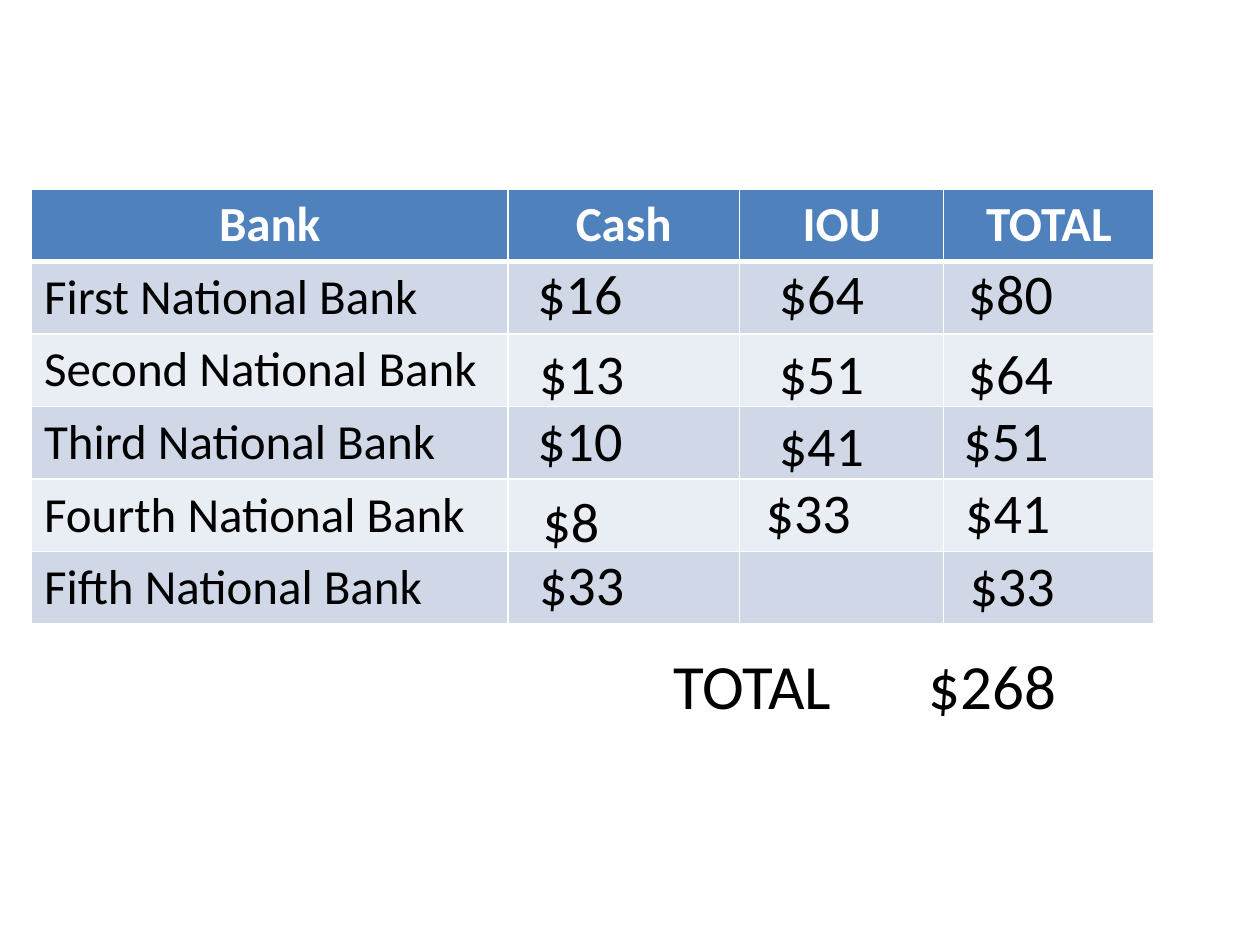
"""Build the slide of cash, IOUs and totals held by five banks."""
from pptx import Presentation
from pptx.dml.color import RGBColor
from pptx.enum.text import MSO_AUTO_SIZE, PP_ALIGN
from pptx.oxml import parse_xml
from pptx.oxml.ns import nsdecls
from pptx.util import Pt

COLORS = {"head": "4F81BD", "odd": "D0D8E8", "even": "E9EDF4",
          "white": "FFFFFF", "black": "000000"}
HEADS = ["Bank", "Cash", "IOU", "TOTAL"]
BANKS = ["First", "Second", "Third", "Fourth", "Fifth"]
WIDTHS = [272.2, 132.5, 116.6, 120.2]
AMOUNTS = [
    ("$16", 300, 144), ("$64", 438, 144), ("$80", 546, 144),
    ("$13", 301, 190), ("$51", 438, 190), ("$64", 546, 190),
    ("$10", 300, 228), ("$41", 438, 231), ("$51", 543.5, 228),
    ("$8", 303, 274.5), ("$33", 430.5, 269.5), ("$41", 544.5, 269.5),
    ("$33", 301, 310.5), ("$33", 547, 311),
]


class Deck:
    """Hold the style and the current slide."""

    def __init__(self, width, height):
        self.font = "Calibri"
        self.prs = Presentation()
        self.prs.slide_width, self.prs.slide_height = Pt(width), Pt(height)
        self.slide = self.prs.slides.add_slide(self.prs.slide_layouts[6])

    def style(self, para, color="black", **form):
        for run in para.runs:
            for key, value in {"name": self.font, "bold": False, **form}.items():
                setattr(run.font, key, value)
            run.font.color.rgb = RGBColor.from_string(COLORS[color])

    def text(self, words, left, top, width, height, size, tab=None):
        box = self.slide.shapes.add_textbox(Pt(left), Pt(top), Pt(width), Pt(height))
        frame = box.text_frame
        frame.word_wrap = True
        frame.auto_size = MSO_AUTO_SIZE.SHAPE_TO_FIT_TEXT
        para = frame.paragraphs[0]
        para.add_run().text = words
        self.style(para, size=Pt(size))
        if tab:
            para._p.get_or_add_pPr().append(parse_xml(
                f'<a:tabLst {nsdecls("a")}><a:tab pos="{Pt(tab)}" algn="l"/></a:tabLst>'))

    def border(self, cell, bottom):
        props = cell._tc.get_or_add_tcPr()
        sides = {"L": 1, "R": 1, "T": 1, "B": bottom}
        for place, (side, width) in enumerate(sides.items()):
            props.insert(place, parse_xml(
                f'<a:ln{side} {nsdecls("a")} w="{Pt(width)}"><a:solidFill>'
                f'<a:srgbClr val="{COLORS["white"]}"/></a:solidFill></a:ln{side}>'))

    def table(self, rows, left, top, widths, height, size):
        grid = self.slide.shapes.add_table(
            len(rows), len(widths), Pt(left), Pt(top),
            Pt(sum(widths)), Pt(height * len(rows))).table
        for col, width in zip(grid.columns, widths):
            col.width = Pt(width)
        for r, row in enumerate(rows):
            fill = "head" if r == 0 else "odd" if r % 2 else "even"
            for c, words in enumerate(row):
                cell = grid.cell(r, c)
                cell.fill.solid()
                cell.fill.fore_color.rgb = RGBColor.from_string(COLORS[fill])
                self.border(cell, 1 if r else 3)
                if words:
                    para = cell.text_frame.paragraphs[0]
                    para.add_run().text = words
                    para.alignment = PP_ALIGN.LEFT if r else PP_ALIGN.CENTER
                    self.style(para, "black" if r else "white",
                               size=Pt(size), bold=r == 0)

    def save(self):
        self.prs.save("out.pptx")


def main():
    deck = Deck(720, 540)
    rows = [HEADS] + [[f"{name} National Bank", "", "", ""] for name in BANKS]
    deck.table(rows, 18, 108, WIDTHS, 41.3, 28)
    deck.text("TOTAL\t$268", 378, 366, 276, 51, 36, tab=145.5)
    for words, left, top in AMOUNTS:
        deck.text(words, left, top, 78, 46, 32)
    deck.save()


if __name__ == "__main__":
    main()
